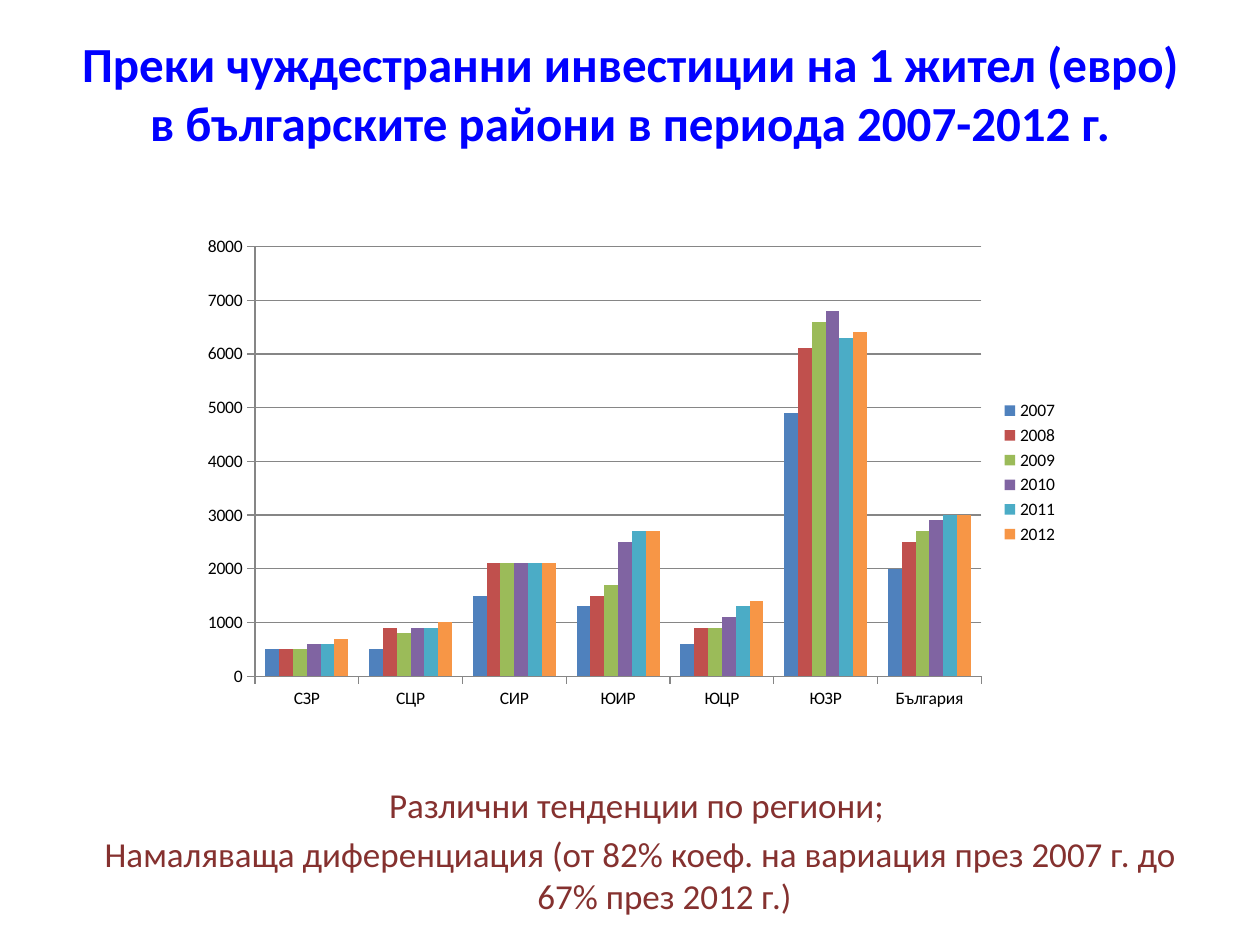
"""Build a slide on foreign direct investment per inhabitant in the Bulgarian regions."""
from dataclasses import dataclass

from pptx import Presentation
from pptx.chart.data import CategoryChartData
from pptx.dml.color import RGBColor
from pptx.enum.chart import XL_CHART_TYPE as ChartType
from pptx.enum.chart import XL_LEGEND_POSITION as LegendPosition
from pptx.enum.chart import XL_TICK_MARK as TickMark
from pptx.enum.text import MSO_ANCHOR as Anchor
from pptx.enum.text import PP_ALIGN as Align
from pptx.util import Inches, Pt


@dataclass(frozen=True)
class Theme:
    font: str = "Calibri"
    title_color: str = "0000FF"
    note_color: str = "85312F"
    chart_color: str = "000000"
    line_color: str = "868686"
    series_colors: tuple = ("4F81BD", "C0504D", "9BBB59", "8064A2", "4BACC6", "F79646")
    title_size: int = 28
    note_size: int = 20
    chart_size: int = 10


theme = Theme()


def set_font(font, size, color, bold=False):
    font.name = theme.font
    font.size = Pt(size)
    font.bold = bold
    font.color.rgb = RGBColor.from_string(color)


def add_text(slide, text, *, box, size, color, bold=False, anchor=Anchor.TOP, space_before=0, hanging=0):
    shape = slide.shapes.add_textbox(*map(Inches, box))
    frame = shape.text_frame
    frame.word_wrap = True
    frame.vertical_anchor = anchor
    frame.text = text
    for paragraph in frame.paragraphs:
        paragraph.alignment = Align.CENTER
        paragraph.space_before = Pt(space_before)
        properties = paragraph._p.get_or_add_pPr()
        properties.set("marL", str(Inches(hanging)))
        properties.set("indent", str(Inches(-hanging)))
        for run in paragraph.runs:
            set_font(run.font, size, color, bold)


presentation = Presentation()
presentation.slide_width = Inches(10)
presentation.slide_height = Inches(7.5)
slide = presentation.slides.add_slide(presentation.slide_layouts[6])

add_text(
    slide,
    "Преки чуждестранни инвестиции на 1 жител (евро) в българските райони в периода 2007-2012 г.",
    box=(0.5, 0.3, 9, 0.87),
    size=theme.title_size,
    color=theme.title_color,
    bold=True,
    anchor=Anchor.MIDDLE,
)
add_text(
    slide,
    "Различни тенденции по региони; \n"
    "Намаляваща диференциация (от 82% коеф. на вариация през 2007 г. до 67% през 2012 г.)",
    box=(0.5, 6.17, 9.17, 0.83),
    size=theme.note_size,
    color=theme.note_color,
    space_before=4,
    hanging=0.38,
)

investment_by_year = {
    "2007": (500, 500, 1500, 1300, 600, 4900, 2000),
    "2008": (500, 900, 2100, 1500, 900, 6100, 2500),
    "2009": (500, 800, 2100, 1700, 900, 6600, 2700),
    "2010": (600, 900, 2100, 2500, 1100, 6800, 2900),
    "2011": (600, 900, 2100, 2700, 1300, 6300, 3000),
    "2012": (700, 1000, 2100, 2700, 1400, 6400, 3000),
}
chart_data = CategoryChartData()
chart_data.categories = ["СЗР", "СЦР", "СИР", "ЮИР", "ЮЦР", "ЮЗР", "България"]
for year, investment in investment_by_year.items():
    chart_data.add_series(year, investment)

chart_box = map(Inches, (1.51, 1.8, 6.99, 3.9))
chart = slide.shapes.add_chart(ChartType.COLUMN_CLUSTERED, *chart_box, chart_data).chart
set_font(chart.font, theme.chart_size, theme.chart_color)
chart.has_title = False
chart.has_legend = True
chart.legend.position = LegendPosition.RIGHT
chart.legend.include_in_layout = False

plot = chart.plots[0]
plot.gap_width = 150
plot.overlap = 0
plot.vary_by_categories = False
for series, color in zip(plot.series, theme.series_colors):
    series.invert_if_negative = False
    series.format.fill.solid()
    series.format.fill.fore_color.rgb = RGBColor.from_string(color)

value_axis = chart.value_axis
value_axis.minimum_scale = 0
value_axis.maximum_scale = 8000
value_axis.major_unit = 1000
value_axis.has_major_gridlines = True
for axis in (chart.category_axis, value_axis):
    axis.major_tick_mark = TickMark.OUTSIDE
    axis.minor_tick_mark = TickMark.NONE
for line_owner in (chart.category_axis, value_axis, value_axis.major_gridlines):
    line = line_owner.format.line
    line.color.rgb = RGBColor.from_string(theme.line_color)
    line.width = Pt(0.75)

presentation.save("out.pptx")
